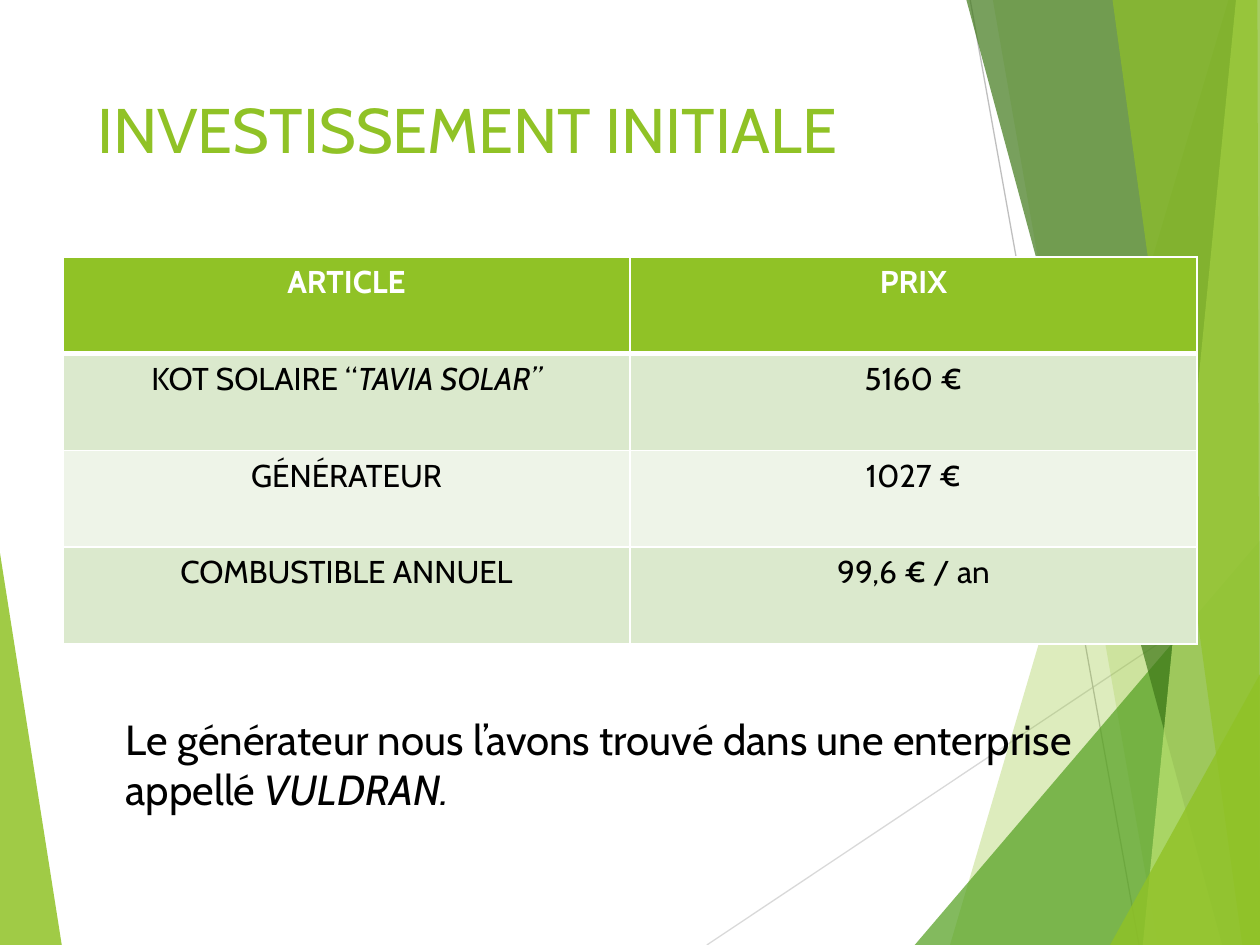
"""Builds the initial investment slide with its price table and green facets."""
from dataclasses import dataclass

from lxml import etree
from pptx import Presentation
from pptx.dml.color import RGBColor
from pptx.enum.shapes import MSO_CONNECTOR
from pptx.enum.text import MSO_ANCHOR, MSO_AUTO_SIZE, PP_ALIGN
from pptx.oxml.ns import qn
from pptx.util import Inches, Pt

STRAIGHT = MSO_CONNECTOR.STRAIGHT
TOP = MSO_ANCHOR.TOP
LEFT, CENTER = PP_ALIGN.LEFT, PP_ALIGN.CENTER
NO_AUTOFIT, GROW = MSO_AUTO_SIZE.NONE, MSO_AUTO_SIZE.SHAPE_TO_FIT_TEXT


@dataclass(frozen=True)
class Theme:
    font: str = "Cabin"
    green: str = "90C226"
    leaf: str = "54A021"
    forest: str = "3F7819"
    lime: str = "C0E474"
    band_dark: str = "DBE9CD"
    band_light: str = "EEF4E8"
    white: str = "FFFFFF"
    black: str = "000000"
    line_light: str = "D9D9D9"
    line_dark: str = "BFBFBF"
    title_size: int = 36
    note_size: int = 24
    table_size: int = 18


theme = Theme()


def write_runs(para, runs, size, color, align, bold=False):
    para.alignment = align
    para.font.name = theme.font
    para.font.size = Pt(size)
    para.font.bold = bold
    para.font.color.rgb = RGBColor.from_string(color)
    for text, italic in runs:
        span = para.add_run()
        span.text = text
        if italic:
            span.font.italic = True


def add_facet(page, points, color, opacity):
    corners = [(Inches(x), Inches(y)) for x, y in points]
    builder = page.shapes.build_freeform(*corners[0], scale=1.0)
    builder.add_line_segments(corners[1:], close=True)
    facet = builder.convert_to_shape()
    facet.shadow.inherit = False
    facet.line.fill.background()
    facet.fill.solid()
    facet.fill.fore_color.rgb = RGBColor.from_string(color)
    tint = facet.fill._xPr.find(".//" + qn("a:srgbClr"))
    etree.SubElement(tint, qn("a:alpha"), val=str(opacity * 1000))


deck = Presentation()
deck.slide_width, deck.slide_height = Inches(10), Inches(7.5)
page = deck.slides.add_slide(deck.slide_layouts[5])

add_facet(page, [(0, 4.39), (0.49, 7.5), (0, 7.5)], theme.green, 85)

for start, end, color in [
    ((5.61, 7.5), (10, 4.57), theme.line_light),
    ((7.7, 0), (9.04, 7.5), theme.line_dark),
]:
    ray = page.shapes.add_connector(STRAIGHT, *map(Inches, start + end))
    ray.line.color.rgb = RGBColor.from_string(color)
    ray.line.width = Pt(0.75)
    etree.SubElement(ray._element.spPr, qn("a:effectLst"))

for points, color, opacity in [
    ([(9.75, 0), (7.54, 7.5), (10, 7.5), (10, 0)], theme.green, 30),
    ([(7.88, 0), (9.19, 7.5), (10, 7.5), (10, 0)], theme.green, 20),
    ([(7.26, 7.5), (10, 4.29), (10, 7.5)], theme.leaf, 72),
    ([(7.67, 0), (9.7, 7.5), (10, 7.5), (10, 0)], theme.forest, 70),
    ([(9.81, 0), (9.07, 7.5), (10, 7.5), (10, 0)], theme.lime, 70),
    ([(8.83, 0), (9.86, 7.5), (10, 7.5), (9.98, 0)], theme.green, 65),
    ([(8.81, 7.5), (10, 5.35), (10, 7.5)], theme.green, 80),
]:
    add_facet(page, points, color, opacity)

title = page.shapes.title
page.shapes._spTree.append(title._element)
title.left, title.top = Inches(0.67), Inches(0.67)
title.width, title.height = Inches(6.94), Inches(1.44)
title.text_frame.vertical_anchor = TOP
title.text_frame.auto_size = NO_AUTOFIT
write_runs(title.text_frame.paragraphs[0], [("INVESTISSEMENT INITIALE", False)],
           theme.title_size, theme.green, LEFT)

rows = [
    ([("ARTICLE", False)], "PRIX"),
    ([("KOT SOLAIRE “", False), ("TAVIA SOLAR”", True)], "5160 €"),
    ([("GÉNÉRATEUR", False)], "1027 €"),
    ([("COMBUSTIBLE ANNUEL", False)], "99,6 € / an"),
]
table = page.shapes.add_table(len(rows), 2, Inches(0.5), Inches(2.04),
                              Inches(9), Inches(3.07)).table
for row_index, (article, price) in enumerate(rows):
    header = row_index == 0
    band = theme.band_dark if row_index % 2 else theme.band_light
    widths = {"lnL": 1, "lnR": 1, "lnT": 3 if row_index == 1 else 1,
              "lnB": 3 if header else 1}
    for column_index, runs in enumerate([article, [(price, False)]]):
        cell = table.cell(row_index, column_index)
        cell.fill.solid()
        cell.fill.fore_color.rgb = RGBColor.from_string(theme.green if header else band)
        write_runs(cell.text_frame.paragraphs[0], runs, theme.table_size,
                   theme.white if header else theme.black, CENTER, header)
        properties = cell._tc.get_or_add_tcPr()
        for position, (side, width) in enumerate(widths.items()):
            border = etree.Element(qn("a:" + side), w=str(Pt(width)))
            fill = etree.SubElement(border, qn("a:solidFill"))
            etree.SubElement(fill, qn("a:srgbClr"), val=theme.white)
            properties.insert(position, border)

note = page.shapes.add_textbox(Inches(0.9), Inches(5.61), Inches(8.16), Inches(0.91))
note.text_frame.word_wrap = True
note.text_frame.auto_size = GROW
write_runs(note.text_frame.paragraphs[0],
           [("Le générateur nous l’avons trouvé dans une enterprise appellé ", False),
            ("VULDRAN.", True)],
           theme.note_size, theme.black, LEFT)

deck.save("out.pptx")
